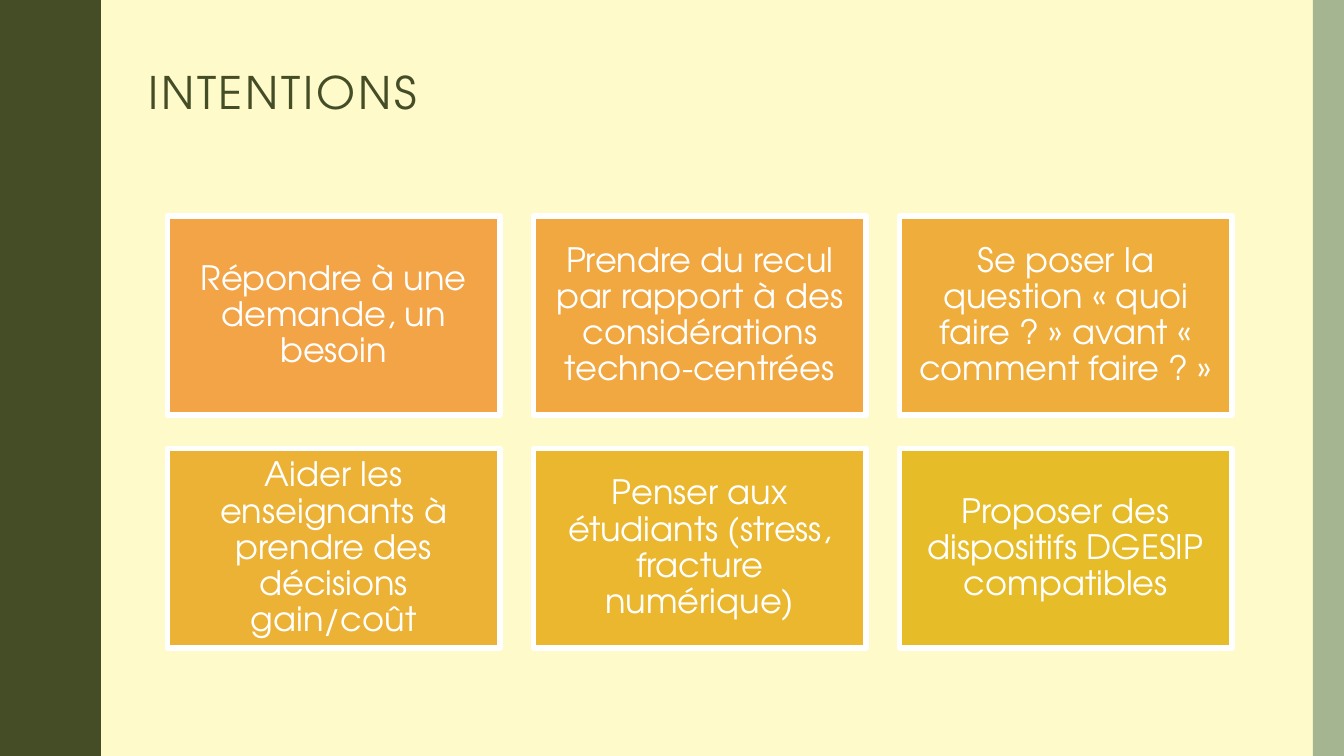
from pptx import Presentation
from pptx.dml.color import RGBColor
from pptx.enum.shapes import MSO_SHAPE
from pptx.enum.text import MSO_ANCHOR, MSO_AUTO_SIZE, PP_ALIGN
from pptx.util import Inches, Pt

TITLE = "INTENTIONS"
INTENTIONS = [
    ("Répondre à une demande, un besoin", "F3A447"),
    ("Prendre du recul par rapport à des considérations techno-centrées", "F1A841"),
    ("Se poser la question « quoi faire ? » avant « comment faire ? »", "EFAD3B"),
    ("Aider les enseignants à prendre des décisions gain/coût", "ECB235"),
    ("Penser aux étudiants (stress, fracture numérique)", "EAB72F"),
    ("Proposer des dispositifs DGESIP compatibles", "E7BC29"),
]
COLORS = {"background": "FEFAC9", "dark": "444D26", "band": "A5B592", "white": "FFFFFF"}
FONT = "TeX Gyre Adventor"
WIDTH, HEIGHT = 13.33, 7.5
BAND_WIDTH = 0.31
COLUMNS = 3
GRID_LEFT, GRID_TOP = 1.66, 2.14
CARD_WIDTH, CARD_HEIGHT, GAP = 3.3, 1.98, 0.33
WAVE_COUNT = 5
WAVE_LENGTH = HEIGHT / WAVE_COUNT
HALF_WAVE = [
    (0.78, 0), (0.78, 0.07), (0.79, 0.14), (0.8, 0.2), (0.81, 0.25), (0.83, 0.29),
    (0.85, 0.33), (0.87, 0.38), (0.89, 0.42), (0.91, 0.46), (0.93, 0.5),
    (0.95, 0.55), (0.96, 0.61), (0.97, 0.68), (0.97, 0.75),
]


def paint(shape, color):
    shape.shadow.inherit = False
    shape.fill.solid()
    shape.fill.fore_color.rgb = RGBColor.from_string(color)
    shape.line.fill.background()


def write(shape, text, size, color, alignment):
    frame = shape.text_frame
    frame.text = text
    frame.word_wrap = True
    frame.auto_size = MSO_AUTO_SIZE.NONE
    frame.vertical_anchor = MSO_ANCHOR.MIDDLE
    paragraph = frame.paragraphs[0]
    paragraph.alignment = alignment
    paragraph.line_spacing = 0.9
    font = paragraph.runs[0].font
    font.name = FONT
    font.size = Pt(size)
    font.color.rgb = RGBColor.from_string(color)
    return paragraph.runs[0]


def add_wave(slide):
    mirrored = [(x, WAVE_LENGTH - y) for x, y in HALF_WAVE[-2:0:-1]]
    edge = [(x, y + wave * WAVE_LENGTH)
            for wave in range(WAVE_COUNT) for x, y in HALF_WAVE + mirrored]
    builder = slide.shapes.build_freeform(0, 0, scale=Inches(1))
    builder.add_line_segments(edge + [(HALF_WAVE[0][0], HEIGHT), (0, HEIGHT)], close=True)
    paint(builder.convert_to_shape(), COLORS["dark"])


def add_rectangle(slide, left, top, width, height, color):
    shape = slide.shapes.add_shape(
        MSO_SHAPE.RECTANGLE, Inches(left), Inches(top), Inches(width), Inches(height))
    paint(shape, color)
    return shape


def add_title(slide):
    title = slide.shapes.title
    title.left, title.top = Inches(1.37), Inches(0.42)
    title.width, title.height = Inches(11.13), Inches(1.05)
    run = write(title, TITLE, 32, COLORS["dark"], PP_ALIGN.LEFT)
    run.font._element.set("spc", "200")


def add_cards(slide):
    for index, (text, color) in enumerate(INTENTIONS):
        row, column = divmod(index, COLUMNS)
        card = add_rectangle(
            slide, GRID_LEFT + column * (CARD_WIDTH + GAP),
            GRID_TOP + row * (CARD_HEIGHT + GAP), CARD_WIDTH, CARD_HEIGHT, color)
        card.line.color.rgb = RGBColor.from_string(COLORS["white"])
        card.line.width = Pt(4)
        frame = card.text_frame
        frame.margin_left = frame.margin_right = Inches(0.1)
        frame.margin_top = frame.margin_bottom = Inches(0.1)
        write(card, text, 24, COLORS["white"], PP_ALIGN.CENTER)


def main():
    presentation = Presentation()
    presentation.slide_width, presentation.slide_height = Inches(WIDTH), Inches(HEIGHT)
    slide = presentation.slides.add_slide(presentation.slide_layouts[5])
    slide.background.fill.solid()
    slide.background.fill.fore_color.rgb = RGBColor.from_string(COLORS["background"])
    add_wave(slide)
    add_rectangle(slide, WIDTH - BAND_WIDTH, 0, BAND_WIDTH, HEIGHT, COLORS["band"])
    add_title(slide)
    add_cards(slide)
    presentation.save("out.pptx")


if __name__ == "__main__":
    main()
